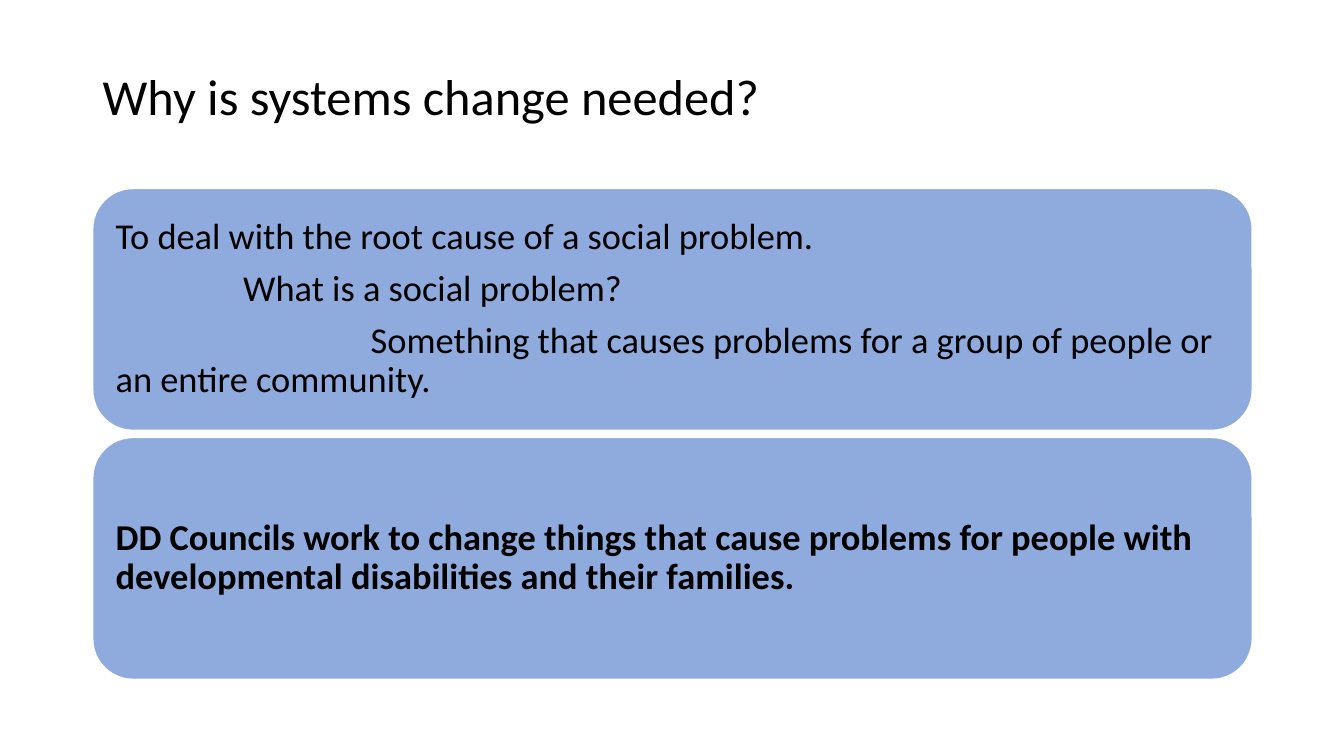
from pptx import Presentation
from pptx.dml.color import RGBColor
from pptx.enum.shapes import MSO_SHAPE
from pptx.enum.text import MSO_ANCHOR, PP_ALIGN
from pptx.util import Inches, Pt

TITLE = "Why is systems change needed?"
CARDS = [
    {"bold": False, "lines": [
        "To deal with the root cause of a social problem.",
        "What is a social problem?",
        "Something that causes problems for a group of people or an entire community.",
    ]},
    {"bold": True, "lines": [
        "DD Councils work to change things that cause problems for people with "
        "developmental disabilities and their families.",
    ]},
]

BLACK = RGBColor(0x00, 0x00, 0x00)
WHITE = RGBColor(0xFF, 0xFF, 0xFF)
BLUE = RGBColor(0x8F, 0xAA, 0xDC)
ROUNDED = MSO_SHAPE.ROUNDED_RECTANGLE
MIDDLE = MSO_ANCHOR.MIDDLE
LEFT = PP_ALIGN.LEFT

MARGIN, WIDTH = 0.92, 11.5
CARD_TOP, CARD_H, CARD_PITCH = 1.87, 2.4, 2.47
CARD_INSET = 0.11
INDENT_STEP = 1.265


def set_attrs(obj, values):
    for name, value in values.items():
        setattr(obj, name, value)


def write(sp, lines, size, inset, bold=False, after=0):
    tf = sp.text_frame
    pad = Inches(inset)
    set_attrs(tf, {"word_wrap": True, "vertical_anchor": MIDDLE,
                   "margin_left": pad, "margin_right": pad,
                   "margin_top": pad, "margin_bottom": pad})
    for i, line in enumerate(lines):
        p = tf.paragraphs[0] if i == 0 else tf.add_paragraph()
        set_attrs(p, {"alignment": LEFT, "line_spacing": 0.9,
                      "space_after": Pt(after)})
        p._p.get_or_add_pPr().set("indent", str(Inches(i * INDENT_STEP)))
        r = p.add_run()
        r.text = line
        set_attrs(r.font, {"name": "Calibri", "size": Pt(size), "bold": bold})
        r.font.color.rgb = BLACK


prs = Presentation()
set_attrs(prs, {"slide_width": Inches(13.33), "slide_height": Inches(7.5)})
s = prs.slides.add_slide(prs.slide_layouts[6])

title = s.shapes.add_textbox(Inches(MARGIN), Inches(0.4), Inches(WIDTH), Inches(1.16))
write(title, [TITLE], 36, 0.1)

for i, card in enumerate(CARDS):
    sp = s.shapes.add_shape(ROUNDED, Inches(MARGIN), Inches(CARD_TOP + i * CARD_PITCH),
                            Inches(WIDTH), Inches(CARD_H))
    sp.shadow.inherit = False
    sp.fill.solid()
    sp.fill.fore_color.rgb = BLUE
    sp.line.color.rgb = WHITE
    sp.line.width = Pt(1)
    write(sp, card["lines"], 26, CARD_INSET, card["bold"], 9.1)

prs.save("out.pptx")
